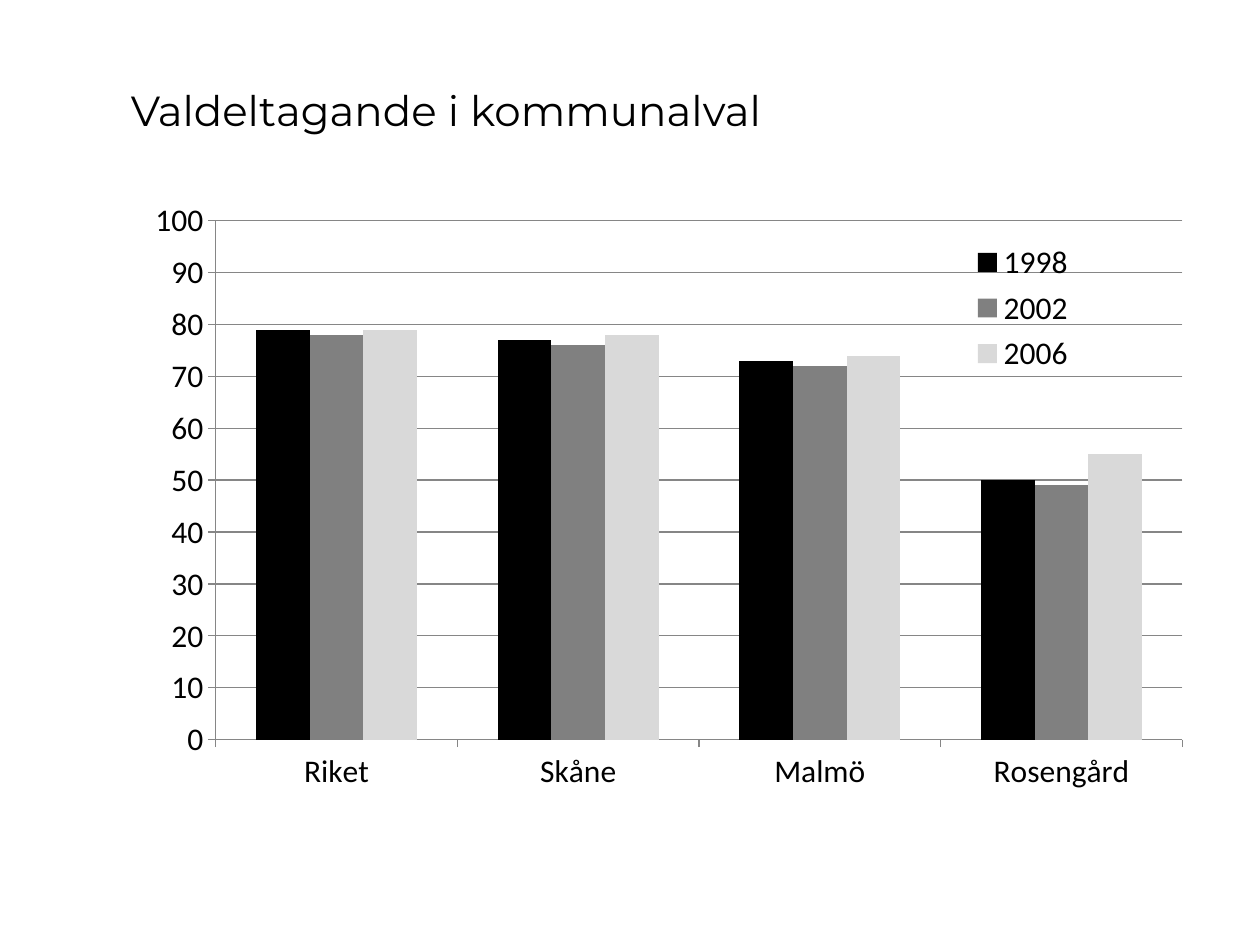
from typing import NamedTuple

from lxml import etree
from pptx import Presentation
from pptx import util as u
from pptx.chart.data import CategoryChartData
from pptx.dml.color import RGBColor
from pptx.enum import chart as ch
from pptx.enum import text as tx
from pptx.oxml.ns import qn

WIDE, HIGH = u.Inches(10), u.Inches(7.5)
HUES = {"ink": "000000", "mid": "808080", "pale": "D9D9D9", "axis": "868686"}


class Box(NamedTuple):
    """Left, top, width and height in percent of the whole."""
    left: float
    top: float
    width: float
    height: float

    def scale(self) -> list[int]:
        return [round(p * s / 100)
                for p, s in zip(self, (WIDE, HIGH, WIDE, HIGH))]


class Year(NamedTuple):
    name: str
    hue: str
    votes: tuple[int, ...]


PLACES = ("Riket", "Skåne", "Malmö", "Rosengård")
YEARS = (
    Year("1998", "ink", (79, 77, 73, 50)),
    Year("2002", "mid", (78, 76, 72, 49)),
    Year("2006", "pale", (79, 78, 74, 55)),
)


def tint(hue: str) -> RGBColor:
    return RGBColor.from_string(HUES[hue])


def style(font, size: int, face: str) -> None:
    font.size, font.name, font.bold = u.Pt(size), face, False
    font.color.rgb = tint("ink")


def place(part, box: Box, index: int, inner: bool = False) -> None:
    """Give a chart part a manual layout in percent of the chart."""
    for old in part.findall(qn("c:layout")):
        part.remove(old)
    layout = etree.Element(qn("c:layout"))
    manual = etree.SubElement(layout, qn("c:manualLayout"))
    rules = [("layoutTarget", "inner")] if inner else []
    rules += [("xMode", "edge"), ("yMode", "edge")]
    rules += [(tag, f"{side / 100:.3f}") for tag, side in zip("xywh", box)]
    for tag, val in rules:
        etree.SubElement(manual, qn(f"c:{tag}")).set("val", val)
    part.insert(index, layout)


def add_chart(slide, box: Box) -> None:
    data = CategoryChartData()
    data.categories = PLACES
    for year in YEARS:
        data.add_series(year.name, year.votes)
    frame = slide.shapes.add_chart(
        ch.XL_CHART_TYPE.COLUMN_CLUSTERED, *box.scale(), data)
    chart = frame.chart
    chart.has_title = False
    style(chart.font, 18, "Calibri")

    plot = chart.plots[0]
    plot.vary_by_categories = False
    plot.gap_width, plot.overlap = 150, 0
    for bars, year in zip(plot.series, YEARS):
        bars.format.fill.solid()
        bars.format.fill.fore_color.rgb = tint(year.hue)

    scale = chart.value_axis
    scale.minimum_scale, scale.maximum_scale, scale.major_unit = 0, 100, 10
    scale.has_major_gridlines = True
    for axis in (scale, chart.category_axis):
        axis.major_tick_mark = ch.XL_TICK_MARK.OUTSIDE
    for part in (scale, chart.category_axis, scale.major_gridlines):
        part.format.line.color.rgb = tint("axis")
        part.format.line.width = u.Pt(0.75)

    chart.has_legend = True
    legend = chart.legend
    legend.position = ch.XL_LEGEND_POSITION.RIGHT
    legend.include_in_layout = False
    style(legend.font, 18, "Calibri")
    area = chart.element.find(f".//{qn('c:plotArea')}")
    key = chart.element.find(f".//{qn('c:legend')}")
    place(area, Box(8.2, 4.4, 90.9, 81.9), 0, inner=True)
    place(key, Box(77.6, 6.8, 13, 22.8), 1)


def add_title(slide, words: str, box: Box) -> None:
    frame = slide.shapes.add_textbox(*box.scale()).text_frame
    frame.word_wrap = True
    frame.auto_size = tx.MSO_AUTO_SIZE.SHAPE_TO_FIT_TEXT
    run = frame.paragraphs[0].add_run()
    run.text = words
    style(run.font, 24, "Montserrat")


def main() -> None:
    deck = Presentation()
    deck.slide_width, deck.slide_height = WIDE, HIGH
    slide = deck.slides.add_slide(deck.slide_layouts[6])
    add_chart(slide, Box(10.2, 20.4, 84.4, 67.07))
    add_title(slide, "Valdeltagande i kommunalval",
              Box(9.4, 8.27, 84.4, 6.67))
    deck.save("out.pptx")


if __name__ == "__main__":
    main()
